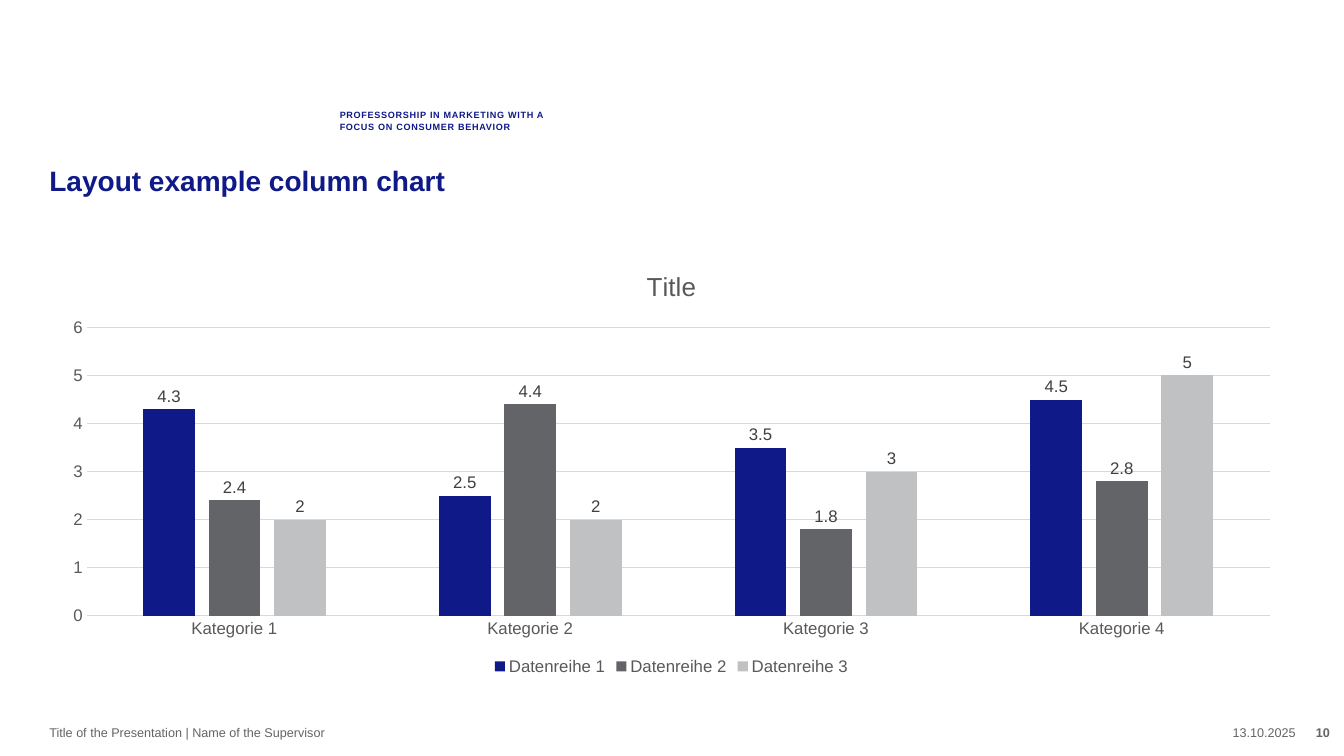
import pptx
import pptx.chart.data
import pptx.dml.color
import pptx.enum.chart
import pptx.enum.text
import pptx.util

Inches = pptx.util.Inches
Pt = pptx.util.Pt
ALIGN = pptx.enum.text.PP_ALIGN
ANCHOR = pptx.enum.text.MSO_ANCHOR

FONT = "Arial"
NAVY, GRAY, SILVER = "0F1987", "626468", "C0C1C3"
AXIS_TEXT, LABEL_TEXT, GRID = "595959", "404040", "D9D9D9"

CATEGORIES = ["Kategorie 1", "Kategorie 2", "Kategorie 3", "Kategorie 4"]
SERIES = [
    ("Datenreihe 1", (4.3, 2.5, 3.5, 4.5), NAVY),
    ("Datenreihe 2", (2.4, 4.4, 1.8, 2.8), GRAY),
    ("Datenreihe 3", (2, 2, 3, 5), SILVER),
]


def color(hex_string):
    """Turn a hex string into a colour."""
    return pptx.dml.color.RGBColor.from_string(hex_string)


def style_font(font, size, hex_string, bold=False):
    """Set typeface, size, colour and weight of a font."""
    font.name = FONT
    font.size = Pt(size)
    font.bold = bold
    font.color.rgb = color(hex_string)


def add_text(slide, box, text, size, hex_string, bold=False,
             anchor=ANCHOR.MIDDLE, align=ALIGN.LEFT, insets=(0, 0, 0, 0)):
    """Add a wrapped one-run text box and return its paragraph."""
    shape = slide.shapes.add_textbox(*map(Inches, box))
    frame = shape.text_frame
    frame.word_wrap = True
    frame.vertical_anchor = anchor
    (frame.margin_left, frame.margin_top,
     frame.margin_right, frame.margin_bottom) = map(Inches, insets)
    paragraph = frame.paragraphs[0]
    paragraph.alignment = align
    run = paragraph.add_run()
    run.text = text
    style_font(run.font, size, hex_string, bold)
    return paragraph


def add_header(slide, left, top, width):
    """Place the professorship name and the slide title."""
    paragraph = add_text(
        slide, (left + 2.84, top, 2.2, 0.87),
        "PROFESSORSHIP IN MARKETING WITH A FOCUS ON CONSUMER BEHAVIOR",
        6.5, NAVY, True, ANCHOR.BOTTOM, insets=(0.04, 0, 0, 0.04))
    paragraph.line_spacing = 1.1
    paragraph.runs[0].font._element.set("spc", "50")
    add_text(slide, (left, top + 1.14, width, 0.71),
             "Layout example column chart", 20, NAVY, True, ANCHOR.TOP)


def style_axis(axis):
    """Give an axis its text and remove its tick marks."""
    style_font(axis.tick_labels.font, 12, AXIS_TEXT)
    axis.major_tick_mark = pptx.enum.chart.XL_TICK_MARK.NONE
    axis.minor_tick_mark = pptx.enum.chart.XL_TICK_MARK.NONE


def style_line(line):
    """Give a chart line the thin grid style."""
    line.color.rgb = color(GRID)
    line.width = Pt(0.75)


def add_column_chart(slide, left, top, width, height):
    """Place the clustered column chart in its box."""
    data = pptx.chart.data.CategoryChartData()
    data.categories = CATEGORIES
    for name, values, _ in SERIES:
        data.add_series(name, values)
    chart = slide.shapes.add_chart(
        pptx.enum.chart.XL_CHART_TYPE.COLUMN_CLUSTERED,
        *map(Inches, (left, top, width, height)), data).chart
    style_font(chart.font, 10, "000000")

    chart.has_title = True
    run = chart.chart_title.text_frame.paragraphs[0].add_run()
    run.text = "Title"
    style_font(run.font, 18.6, AXIS_TEXT)
    chart.chart_title.include_in_layout = False

    chart.has_legend = True
    chart.legend.position = pptx.enum.chart.XL_LEGEND_POSITION.BOTTOM
    chart.legend.include_in_layout = False
    style_font(chart.legend.font, 12, AXIS_TEXT)

    style_axis(chart.category_axis)
    style_line(chart.category_axis.format.line)
    value_axis = chart.value_axis
    style_axis(value_axis)
    value_axis.minimum_scale, value_axis.maximum_scale = 0, 6
    value_axis.major_unit = 1
    value_axis.format.line.fill.background()
    style_line(value_axis.major_gridlines.format.line)

    plot = chart.plots[0]
    plot.gap_width = 219
    plot.overlap = -27
    plot.vary_by_categories = False
    for series, (_, _, hex_string) in zip(plot.series, SERIES):
        series.format.fill.solid()
        series.format.fill.fore_color.rgb = color(hex_string)
        series.invert_if_negative = False
        labels = series.data_labels
        labels.show_value = True
        labels.position = pptx.enum.chart.XL_LABEL_POSITION.OUTSIDE_END
        style_font(labels.font, 12, LABEL_TEXT)


def add_footer(slide, left, top, height):
    """Place the presentation title, date and slide number."""
    add_text(slide, (left, top, 11.09, height),
             "Title of the Presentation | Name of the Supervisor", 9, GRAY)
    add_text(slide, (left + 11.13, top, 1.23, height),
             "13.10.2025", 9, GRAY, align=ALIGN.RIGHT)
    add_text(slide, (left + 12.4, top, 0.44, height), "10", 9, GRAY, True,
             align=ALIGN.RIGHT, insets=(0, 0, 0.14, 0))


def main():
    """Build the slide and save the file."""
    presentation = pptx.Presentation()
    presentation.slide_width = Inches(13.33)
    presentation.slide_height = Inches(7.5)
    slide = presentation.slides.add_slide(presentation.slide_layouts[6])
    add_header(slide, 0.49, 0.48, 12.36)
    add_column_chart(slide, 0.48, 2.49, 12.36, 4.25)
    add_footer(slide, 0.49, 7.13, 0.28)
    presentation.save("out.pptx")


if __name__ == "__main__":
    main()
